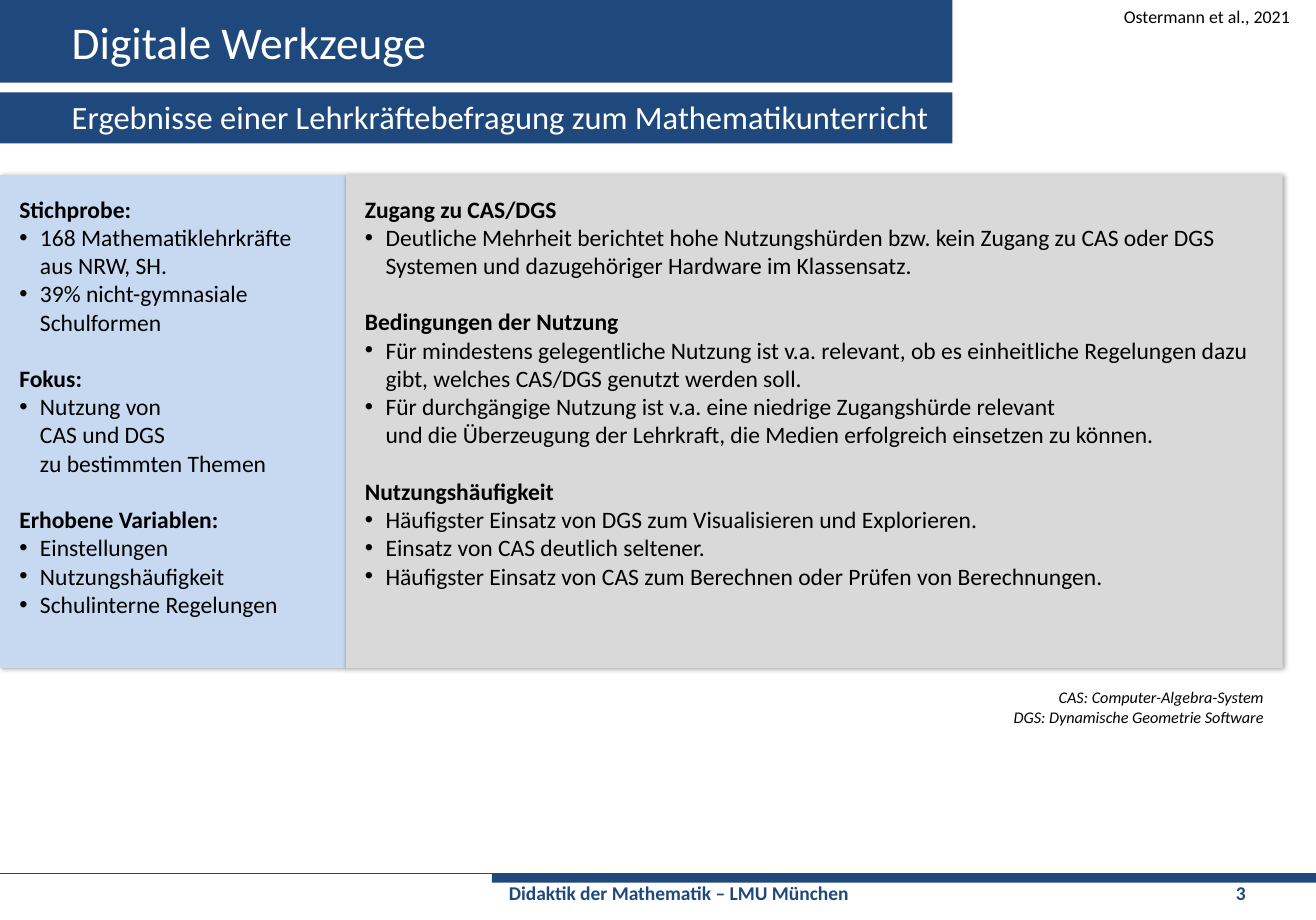
from copy import deepcopy

from lxml import etree
from pptx import Presentation
from pptx import util as u
from pptx.dml.color import RGBColor
from pptx.enum import shapes, text as t
from pptx.oxml.ns import qn

FONT = "Calibri"
COLOURS = {"navy": "1F497D", "sky": "C6D9F1", "grey": "D9D9D9",
           "white": "FFFFFF", "black": "000000"}
PAGE_WIDTH = 28.6
BANNER_WIDTH = 20.7
FOOTER_LEFT, FOOTER_TOP = 10.69, 18.99
PANEL_TOP, PANEL_HEIGHT = 3.81, 10.72
SURVEY_WIDTH, RESULTS_WIDTH = 7.51, 20.37
INSET, PANEL_INSET = (0.25, 0.13), (0.42, 0.42)

SURVEY = {
    "Stichprobe:": ["168 Mathematiklehrkräfte aus NRW, SH.",
                    "39% nicht-gymnasiale Schulformen"],
    "Fokus:": ["Nutzung von\nCAS und DGS\nzu bestimmten Themen"],
    "Erhobene Variablen:": ["Einstellungen", "Nutzungshäufigkeit",
                            "Schulinterne Regelungen"],
}
RESULTS = {
    "Zugang zu CAS/DGS": [
        "Deutliche Mehrheit berichtet hohe Nutzungshürden bzw. kein Zugang zu CAS "
        "oder DGS Systemen und dazugehöriger Hardware im Klassensatz."],
    "Bedingungen der Nutzung": [
        "Für mindestens gelegentliche Nutzung ist v.a. relevant, ob es einheitliche "
        "Regelungen dazu gibt, welches CAS/DGS genutzt werden soll.",
        "Für durchgängige Nutzung ist v.a. eine niedrige Zugangshürde relevant\n"
        "und die Überzeugung der Lehrkraft, die Medien erfolgreich einsetzen zu können."],
    "Nutzungshäufigkeit": [
        "Häufigster Einsatz von DGS zum Visualisieren und Explorieren.",
        "Einsatz von CAS deutlich seltener.",
        "Häufigster Einsatz von CAS zum Berechnen oder Prüfen von Berechnungen."],
}


def rgb(name):
    return RGBColor.from_string(COLOURS[name])


def write(para, text, size, colour="black", bold=False, italic=False,
          align=t.PP_ALIGN.LEFT, before=0):
    para.text = text
    para.alignment = align
    para.space_before = u.Pt(before)
    for span in para.runs:
        font = span.font
        font.name, font.size = FONT, u.Pt(size)
        font.bold, font.italic = bold, italic
        font.color.rgb = rgb(colour)
    # Line breaks take the height of the text around them
    for line_break in para._p.findall(qn("a:br")):
        line_break.insert(0, deepcopy(para.runs[0].font._element))


def set_frame(box, inset, anchor=t.MSO_ANCHOR.TOP):
    frame = box.text_frame
    frame.word_wrap = True
    frame.vertical_anchor = anchor
    frame.margin_left = frame.margin_right = u.Cm(inset[0])
    frame.margin_top = frame.margin_bottom = u.Cm(inset[1])
    return frame


def add_text(page, at, lines, inset=INSET, anchor=t.MSO_ANCHOR.TOP, **style):
    box = page.shapes.add_textbox(*map(u.Cm, at))
    frame = set_frame(box, inset, anchor)
    for number, line in enumerate(lines):
        para = frame.add_paragraph() if number else frame.paragraphs[0]
        write(para, line, **style)
    return box


def add_bar(page, at, colour):
    bar = page.shapes.add_shape(shapes.MSO_SHAPE.RECTANGLE, *map(u.Cm, at))
    bar.fill.solid()
    bar.fill.fore_color.rgb = rgb(colour)
    bar.line.fill.background()
    bar.shadow.inherit = False
    return bar


def add_rule(page, left, right, top, colour):
    rule = page.shapes.add_connector(shapes.MSO_CONNECTOR.STRAIGHT,
                                     *map(u.Cm, (left, top, right, top)))
    rule.line.color.rgb = rgb(colour)
    rule.line.width = u.Pt(1)
    etree.SubElement(rule._element.spPr, qn("a:effectLst"))


def add_shadow(box):
    effects = box._element.spPr.find(qn("a:effectLst"))
    shadow = etree.SubElement(effects, qn("a:outerShdw"), blurRad="38100",
                              dist="12700", dir="1140000", rotWithShape="0")
    colour = etree.SubElement(shadow, qn("a:srgbClr"), val=COLOURS["black"])
    etree.SubElement(colour, qn("a:alpha"), val="35000")


def add_bullet(para):
    props = para._p.get_or_add_pPr()
    props.set("marL", str(u.Cm(0.45)))
    props.set("indent", str(-u.Cm(0.45)))
    etree.SubElement(props, qn("a:buFont"), typeface="Arial")
    etree.SubElement(props, qn("a:buChar"), char="•")


def add_panel(page, at, colour, sections):
    panel = add_bar(page, at, colour)
    add_shadow(panel)
    frame = set_frame(panel, PANEL_INSET)
    para = frame.paragraphs[0]
    for number, (heading, points) in enumerate(sections.items()):
        if number:
            para = frame.add_paragraph()
        write(para, heading, 14.5, bold=True, before=17.4 if number else 0)
        for point in points:
            para = frame.add_paragraph()
            write(para, point, 14.5)
            add_bullet(para)


def add_footer(page):
    width = PAGE_WIDTH - FOOTER_LEFT
    add_rule(page, 0, PAGE_WIDTH, FOOTER_TOP, "navy")
    add_bar(page, (FOOTER_LEFT, FOOTER_TOP, width, 0.2), "navy")
    box = add_text(page, (FOOTER_LEFT, 19.03, width, 0.78),
                   ["Didaktik der Mathematik – LMU München\t3"],
                   inset=(0.37, 0.13), size=12, colour="navy", bold=True)
    # One tab stop carries the page number
    props = box.text_frame.paragraphs[0]._p.get_or_add_pPr()
    tabs = etree.SubElement(props, qn("a:tabLst"))
    etree.SubElement(tabs, qn("a:tab"), pos=str(u.Cm(15.8)), algn="l")


def main():
    deck = Presentation()
    # The page measures whole quarter points
    deck.slide_width, deck.slide_height = u.Pt(810.75), u.Pt(567)
    page = deck.slides.add_slide(deck.slide_layouts[6])

    # Title banners and source
    add_bar(page, (0, 0, BANNER_WIDTH, 1.8), "navy")
    add_bar(page, (0, 2.01, BANNER_WIDTH, 1.11), "navy")
    add_text(page, (1.31, 0, 19.2, 1.8), ["Digitale Werkzeuge"],
             anchor=t.MSO_ANCHOR.MIDDLE, size=28, colour="white")
    add_text(page, (1.31, 1.99, 19.6, 1.12),
             ["Ergebnisse einer Lehrkräftebefragung zum Mathematikunterricht"],
             size=20, colour="white")
    add_text(page, (20.89, 0, 7.4, 1.8), ["Ostermann et al., 2021"],
             size=11, align=t.PP_ALIGN.RIGHT)

    # Survey and results
    add_panel(page, (0, PANEL_TOP, SURVEY_WIDTH, PANEL_HEIGHT), "sky", SURVEY)
    add_panel(page, (SURVEY_WIDTH, PANEL_TOP, RESULTS_WIDTH, PANEL_HEIGHT),
              "grey", RESULTS)

    # Abbreviations
    add_text(page, (SURVEY_WIDTH, PANEL_TOP + PANEL_HEIGHT, RESULTS_WIDTH, 2),
             ["CAS: Computer-Algebra-System", "DGS: Dynamische Geometrie Software"],
             inset=PANEL_INSET, size=10, italic=True, align=t.PP_ALIGN.RIGHT)

    add_footer(page)
    deck.save("out.pptx")


if __name__ == "__main__":
    main()
